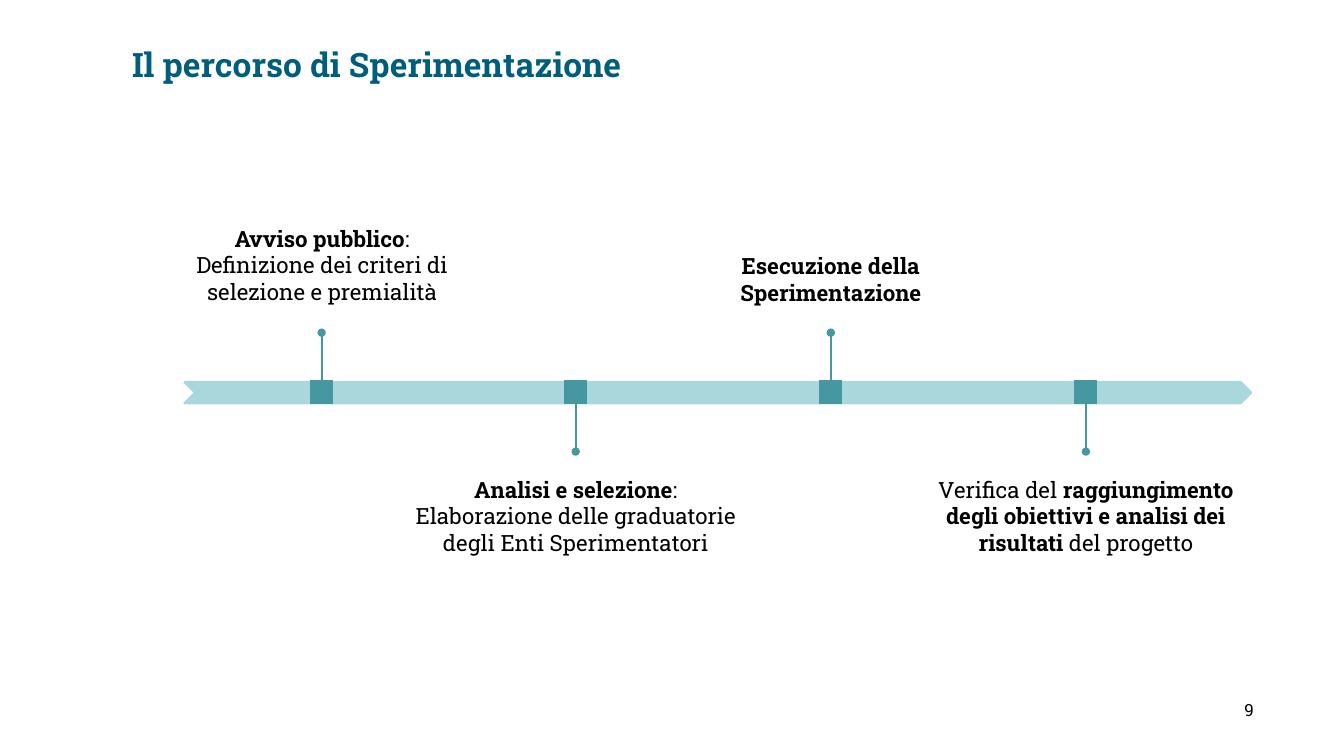
from lxml.etree import SubElement
from pptx import Presentation
from pptx.dml.color import RGBColor
from pptx.enum.shapes import MSO_CONNECTOR, MSO_SHAPE
from pptx.enum.text import MSO_ANCHOR, PP_ALIGN
from pptx.oxml.ns import qn
from pptx.util import Pt

# Content: each label paragraph is a list of (text, bold) runs
TITLE = "Il percorso di Sperimentazione"
PAGE_NUMBER = "9"
STEPS = [
    {"above": True, "width": 287, "lines": 3, "label": [
        [("Avviso pubblico", True), (":", False)],
        [("Definizione dei criteri di selezione e premialità", False)]]},
    {"above": False, "width": 364, "lines": 3, "label": [
        [("Analisi e selezione", True), (":", False)],
        [("Elaborazione delle graduatorie degli Enti Sperimentatori", False)]]},
    {"above": True, "width": 282, "lines": 2, "label": [
        [("Esecuzione della Sperimentazione", True)]]},
    {"above": False, "width": 342, "lines": 3, "label": [
        [("Verifica del ", False),
         ("raggiungimento degli obiettivi e analisi dei risultati ", True),
         ("del progetto", False)]]},
]

# Style and layout, 100 px to the inch
FONT = "Roboto Slab"
COLORS = {"title": "005E7D", "text": "000000", "band": "A9D7DB", "marker": "4597A0"}
EMU_PER_PX = 9144
MARKER_SIZE, MARKER_TOP = 22, 378
FIRST_MARKER, LAST_MARKER = 308, 1066
STEM = 48
LABEL_BOTTOM_ABOVE, LABEL_TOP_BELOW = 309, 467
LINE_HEIGHT, LABEL_PADDING = 27, 10


def px(value):
    return round(value * EMU_PER_PX)


def color(name):
    return RGBColor.from_string(COLORS[name])


def add_block(slide, kind, box, color_name, outline):
    block = slide.shapes.add_shape(kind, *map(px, box))
    block.shadow.inherit = False
    block.fill.solid()
    block.fill.fore_color.rgb = color(color_name)
    block.line.color.rgb = color(color_name)
    block.line.width = Pt(outline)
    return block


def add_text(slide, box, paragraphs, size, color_name="text", align=PP_ALIGN.CENTER):
    frame = slide.shapes.add_textbox(*map(px, box)).text_frame
    frame.word_wrap = True
    for index, runs in enumerate(paragraphs):
        paragraph = frame.paragraphs[0] if index == 0 else frame.add_paragraph()
        paragraph.alignment = align
        paragraph.font.name = FONT
        paragraph.font.size = Pt(size)
        paragraph.font.color.rgb = color(color_name)
        for text, bold in runs:
            run = paragraph.add_run()
            run.text = text
            run.font.bold = bold
    return frame


def add_stem(slide, marker, center, above):
    start = MARKER_TOP if above else MARKER_TOP + MARKER_SIZE
    end = start - STEM if above else start + STEM
    stem = slide.shapes.add_connector(
        MSO_CONNECTOR.STRAIGHT, px(center), px(start), px(center), px(end))
    stem.begin_connect(marker, 0 if above else 2)
    stem.line.color.rgb = color("marker")
    stem.line.width = Pt(1.5)
    properties = stem.element.spPr
    SubElement(properties.find(qn("a:ln")), qn("a:tailEnd"), type="oval")
    SubElement(properties, qn("a:effectLst"))


def main():
    deck = Presentation()
    deck.slide_width, deck.slide_height = px(1333), px(750)
    slide = deck.slides.add_slide(deck.slide_layouts[6])

    # Title and page number
    title = add_text(slide, (81, 1, 880, 118), [[(TITLE, True)]], 24, "title", PP_ALIGN.LEFT)
    title.vertical_anchor = MSO_ANCHOR.BOTTOM
    title.margin_left, title.margin_bottom = px(50), px(35)
    add_text(slide, (1186, 689, 106, 50), [[(PAGE_NUMBER, False)]], 12)

    # Timeline band
    add_block(slide, MSO_SHAPE.CHEVRON, (183, 379, 1058, 21), "band", 1.5)

    # Steps: marker, stem and label, alternately above and below
    for index, step in enumerate(STEPS):
        left = FIRST_MARKER + index * (LAST_MARKER - FIRST_MARKER) // (len(STEPS) - 1)
        center = left + MARKER_SIZE // 2
        marker = add_block(slide, MSO_SHAPE.RECTANGLE,
                           (left, MARKER_TOP, MARKER_SIZE, MARKER_SIZE), "marker", 0.75)
        add_stem(slide, marker, center, step["above"])

        height = step["lines"] * LINE_HEIGHT + LABEL_PADDING
        top = LABEL_BOTTOM_ABOVE - height if step["above"] else LABEL_TOP_BELOW
        add_text(slide, (center - step["width"] // 2, top, step["width"], height),
                 step["label"], 16)

    deck.save("out.pptx")


if __name__ == "__main__":
    main()
